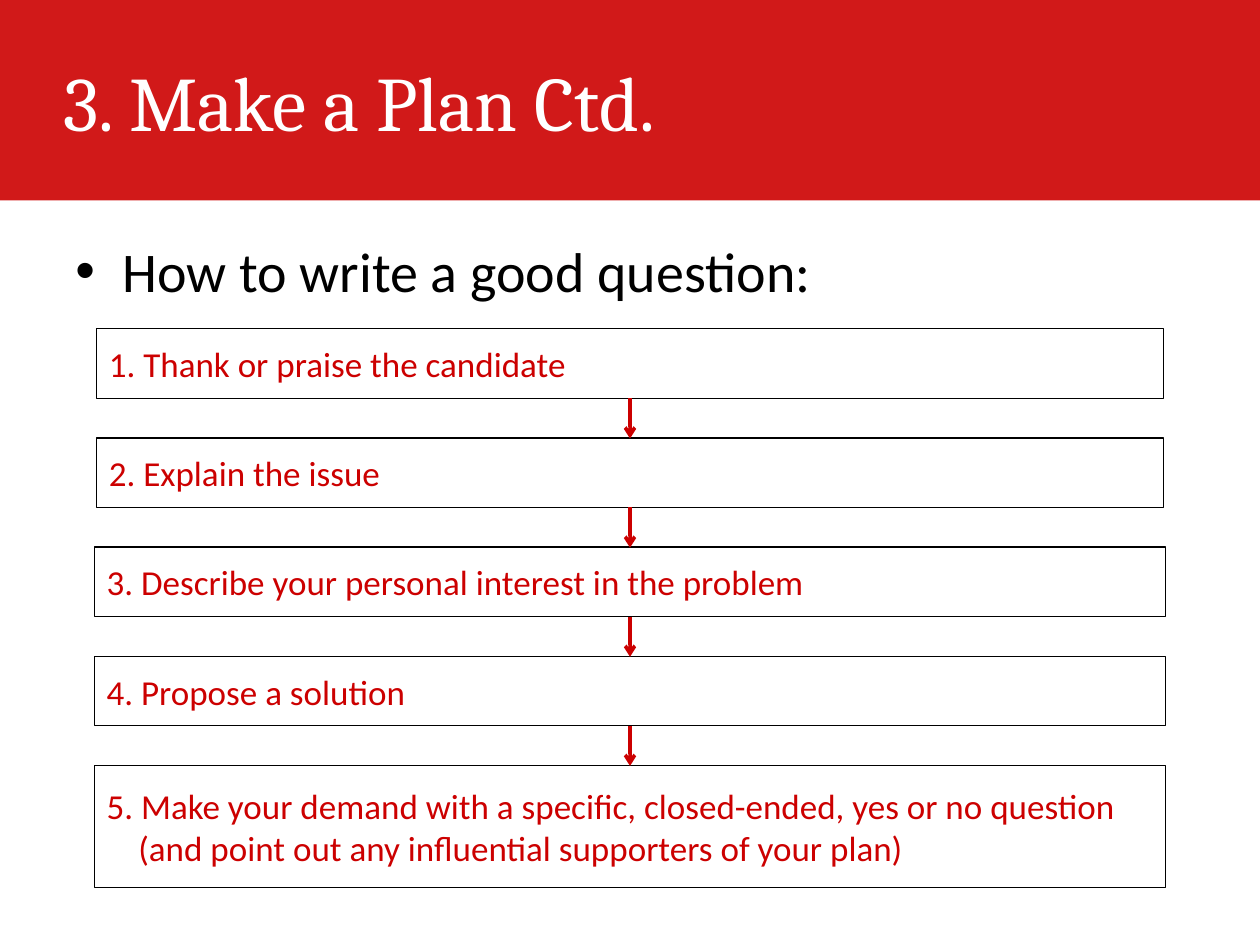
import pptx
import pptx.dml.color
import pptx.enum.shapes
import pptx.enum.text
import pptx.oxml
import pptx.oxml.ns
import pptx.util
from dataclasses import dataclass
from lxml import etree

Cm = pptx.util.Cm
Pt = pptx.util.Pt
RGB = pptx.dml.color.RGBColor.from_string
MiddleAnchor = pptx.enum.text.MSO_ANCHOR.MIDDLE
LeftAlign = pptx.enum.text.PP_ALIGN.LEFT
qn = pptx.oxml.ns.qn


@dataclass(frozen=True)
class Theme:
    red: str = "CC0000"
    white: str = "FFFFFF"
    black: str = "000000"
    heading_font: str = "Cambria"
    body_font: str = "Calibri"
    title_size: int = 44
    bullet_size: int = 32
    step_size: int = 20
    outline: float = 0.75
    arrow: float = 2


THEME = Theme()
SLIDE_WIDTH = 25.4
FIRST_TOP = 6.63
STEP_PITCH = 2.2
STEP_HEIGHT = 1.4
LAST_HEIGHT = 2.46
ARROW_LENGTH = 0.81
SECOND_LINE_INDENT = 0.64
STEPS = [
    (21.51, ["1. Thank or praise the candidate"]),
    (21.51, ["2. Explain the issue"]),
    (21.6, ["3. Describe your personal interest in the problem"]),
    (21.6, ["4. Propose a solution"]),
    (21.6, [
        "5. Make your demand with a specific, closed-ended, yes or no question",
        "(and point out any influential supporters of your plan)",
    ]),
]


def set_attributes(target, values):
    for name, value in values.items():
        setattr(target, name, value)


def write_paragraph(paragraph, text, font, size, color, indent=0, hanging=0):
    paragraph.alignment = LeftAlign
    run = paragraph.add_run()
    run.text = text
    set_attributes(run.font, {"name": font, "size": Pt(size)})
    run.font.color.rgb = RGB(color)
    properties = paragraph._p.get_or_add_pPr()
    properties.set("marL", str(Cm(indent)))
    properties.set("indent", str(-Cm(hanging)))
    return properties


def add_title(slide, text):
    title = slide.shapes.title
    set_attributes(title, {"left": 0, "top": 0, "width": Cm(SLIDE_WIDTH), "height": Cm(4.04)})
    title.fill.solid()
    title.fill.fore_color.rgb = RGB(THEME.red)
    color = title._element.spPr.find(".//" + qn("a:srgbClr"))
    etree.SubElement(color, qn("a:alpha"), val="90000")
    set_attributes(title.text_frame, {
        "vertical_anchor": MiddleAnchor,
        "auto_size": pptx.enum.text.MSO_AUTO_SIZE.NONE,
    })
    write_paragraph(title.text_frame.paragraphs[0], text, THEME.heading_font,
                    THEME.title_size, THEME.white, indent=1.02)


def add_bullet(slide, text):
    shape = slide.shapes.add_textbox(Cm(1.27), Cm(4.65), Cm(22.86), Cm(1.7))
    shape.text_frame.word_wrap = True
    properties = write_paragraph(shape.text_frame.paragraphs[0], text, THEME.body_font,
                                 THEME.bullet_size, THEME.black, indent=0.95, hanging=0.95)
    etree.SubElement(properties, qn("a:buFont"), typeface="Arial")
    etree.SubElement(properties, qn("a:buChar"), char="•")


def add_step(slide, top, width, height, lines):
    shape = slide.shapes.add_shape(
        pptx.enum.shapes.MSO_SHAPE.FLOWCHART_PROCESS,
        Cm((SLIDE_WIDTH - width) / 2), Cm(top), Cm(width), Cm(height))
    shape.shadow.inherit = False
    shape.fill.background()
    shape.line.color.rgb = RGB(THEME.black)
    shape.line.width = Pt(THEME.outline)
    frame = shape.text_frame
    set_attributes(frame, {"word_wrap": True, "vertical_anchor": MiddleAnchor})
    for index, line in enumerate(lines):
        paragraph = frame.add_paragraph() if index else frame.paragraphs[0]
        write_paragraph(paragraph, line, THEME.body_font, THEME.step_size, THEME.red,
                        indent=SECOND_LINE_INDENT if index else 0)


def add_arrow(slide, top):
    center = Cm(SLIDE_WIDTH / 2)
    connector = slide.shapes.add_connector(
        pptx.enum.shapes.MSO_CONNECTOR.STRAIGHT,
        center, Cm(top), center, Cm(top + ARROW_LENGTH))
    connector.line.color.rgb = RGB(THEME.red)
    connector.line.width = Pt(THEME.arrow)
    etree.SubElement(connector.line._get_or_add_ln(), qn("a:tailEnd"), type="arrow")
    etree.SubElement(connector._element.spPr, qn("a:effectLst"))


def main():
    presentation = pptx.Presentation()
    set_attributes(presentation, {"slide_width": Cm(SLIDE_WIDTH), "slide_height": Cm(19.05)})
    slide = presentation.slides.add_slide(presentation.slide_layouts[5])
    add_title(slide, "3. Make a Plan Ctd.")
    add_bullet(slide, "How to write a good question:")
    last = len(STEPS) - 1
    for index, (width, lines) in enumerate(STEPS):
        top = FIRST_TOP + index * STEP_PITCH
        add_step(slide, top, width, LAST_HEIGHT if index == last else STEP_HEIGHT, lines)
    for index in range(last):
        add_arrow(slide, FIRST_TOP + index * STEP_PITCH + STEP_HEIGHT)
    presentation.save("out.pptx")


if __name__ == "__main__":
    main()
